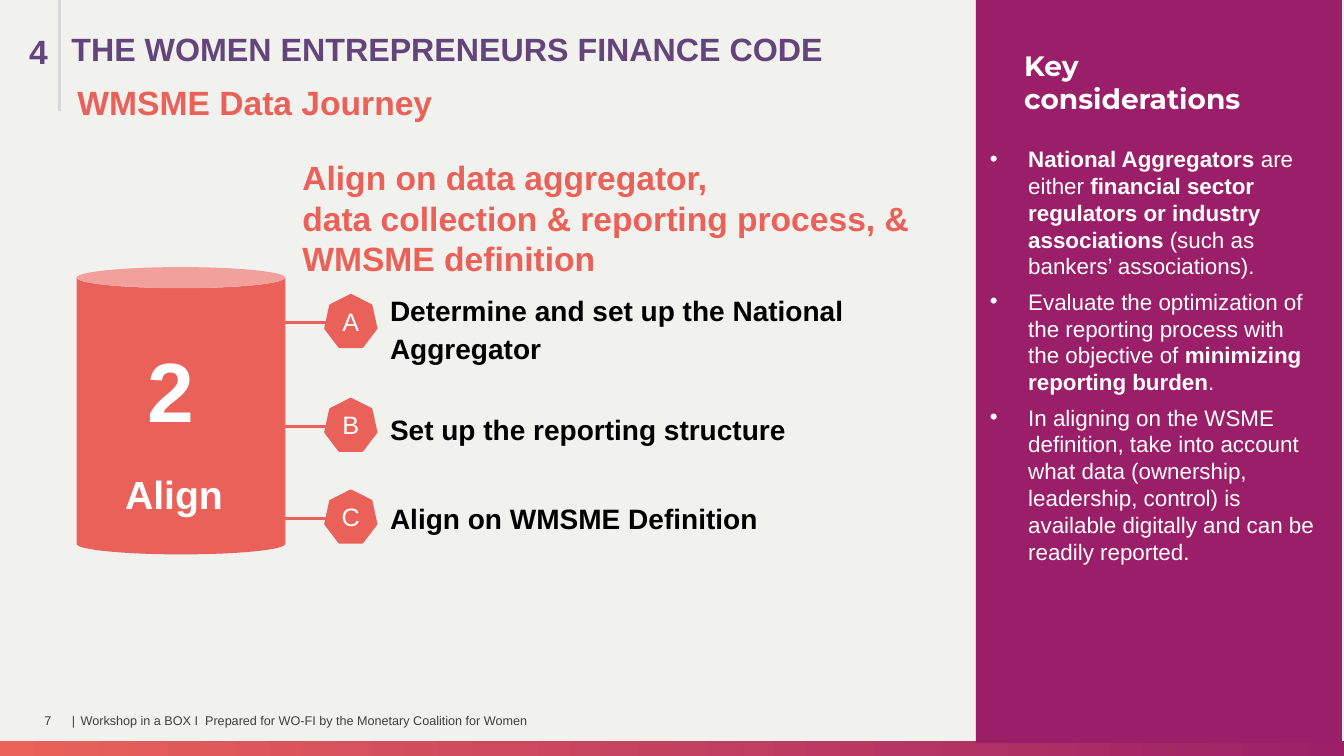
from lxml import etree
from pptx import Presentation
from pptx import util as u
from pptx.dml.color import RGBColor
from pptx.enum import shapes, text
from pptx.oxml import ns

CORAL = RGBColor(0xEA, 0x61, 0x59)
STRIP_CORAL = RGBColor(0xEB, 0x62, 0x58)
MAGENTA = RGBColor(0x9B, 0x1F, 0x68)
STRIP_MAGENTA = RGBColor(0x9B, 0x20, 0x68)
PURPLE = RGBColor(0x64, 0x45, 0x7B)
CREAM = RGBColor(0xF1, 0xF1, 0xEE)
DARK_GREY = RGBColor(0x3F, 0x3F, 0x3F)
LIGHT_GREY = RGBColor(0xD8, 0xD8, 0xD8)
BLACK = RGBColor(0, 0, 0)
WHITE = RGBColor(0xFF, 0xFF, 0xFF)

LEFT, CENTER = text.PP_ALIGN.LEFT, text.PP_ALIGN.CENTER
TOP, MIDDLE = text.MSO_ANCHOR.TOP, text.MSO_ANCHOR.MIDDLE

# Each paragraph is a list of (wording, bold) runs
CONSIDERATIONS = [
    [("National Aggregators ", True), ("are either ", False),
     ("financial sector regulators or industry associations ", True),
     ("(such as bankers’ associations).", False)],
    [("Evaluate the optimization of the reporting process with the objective of ", False),
     ("minimizing reporting burden", True), (".", False)],
    [("In aligning on the WSME definition, take into account what data (ownership, "
      "leadership, control) is available digitally and can be readily reported.", False)],
]
STEPS = ["Determine and set up the National Aggregator",
         "Set up the reporting structure",
         "Align on WMSME Definition"]


def inches(*lengths):
    return [u.Inches(length) for length in lengths]


def add_bullet(paragraph, indent):
    properties = paragraph._p.get_or_add_pPr()
    properties.set("marL", str(u.Inches(indent)))
    properties.set("indent", str(-u.Inches(indent)))
    colour = etree.SubElement(properties, ns.qn("a:buClr"))
    etree.SubElement(colour, ns.qn("a:srgbClr")).set("val", str(WHITE))
    etree.SubElement(properties, ns.qn("a:buFont")).set("typeface", "Arial")
    etree.SubElement(properties, ns.qn("a:buChar")).set("char", "•")


def write_text(shape, paragraphs, size, color, font="Arial", bold=False, align=LEFT,
               anchor=TOP, margins=(0.1, 0.05), line_spacing=None, space_before=(),
               bullet_indent=None):
    """Fill a shape with one string or a list of paragraphs; newlines break lines."""
    frame = shape.text_frame
    frame.word_wrap = True
    frame.vertical_anchor = anchor
    frame.margin_left = frame.margin_right = u.Inches(margins[0])
    frame.margin_top = frame.margin_bottom = u.Inches(margins[1])
    if isinstance(paragraphs, str):
        paragraphs = [paragraphs]
    for index, content in enumerate(paragraphs):
        paragraph = frame.add_paragraph() if index else frame.paragraphs[0]
        paragraph.alignment = align
        if line_spacing:
            paragraph.line_spacing = line_spacing
        if space_before:
            paragraph.space_before = u.Pt(space_before[index])
        if bullet_indent:
            add_bullet(paragraph, bullet_indent)
        runs = [(content, bold)] if isinstance(content, str) else content
        for wording, run_bold in runs:
            for number, line in enumerate(wording.split("\n")):
                if number:
                    paragraph.add_line_break()
                run = paragraph.add_run()
                run.text = line
                run.font.name = font
                run.font.size = u.Pt(size)
                run.font.bold = run_bold
                run.font.color.rgb = color


def add_text(slide, box, paragraphs, **style):
    write_text(slide.shapes.add_textbox(*inches(*box)), paragraphs, **style)


def add_filled(slide, kind, box, color, line_width=0):
    shape = slide.shapes.add_shape(kind, *inches(*box))
    shape.shadow.inherit = False
    shape.fill.solid()
    shape.fill.fore_color.rgb = color
    if line_width:
        shape.line.color.rgb = color
        shape.line.width = u.Pt(line_width)
    else:
        shape.line.fill.background()
    return shape


def add_line(slide, start, end, color):
    line = slide.shapes.add_connector(shapes.MSO_CONNECTOR.STRAIGHT, *inches(*start, *end))
    line.line.color.rgb = color
    line.line.width = u.Pt(2.25)
    etree.SubElement(line._element.spPr, ns.qn("a:effectLst"))


def add_footer(slide, left, top, width, height):
    # Gradient strip along the bottom edge
    strip_height = 0.15
    strip = add_filled(slide, shapes.MSO_SHAPE.RECTANGLE,
                       (left, top + height - strip_height, width, strip_height), CORAL)
    strip.fill.gradient()
    strip.fill.gradient_angle = 180
    for stop, color in zip(strip.fill.gradient_stops, (STRIP_MAGENTA, STRIP_CORAL)):
        stop.color.rgb = color
    # Page number, divider and credit
    style = dict(size=9, color=DARK_GREY, anchor=MIDDLE, margins=(0, 0))
    add_text(slide, (left + 0.44, top, 0.22, 0.4), "7", **style)
    add_text(slide, (left + 0.68, top, 0.1, 0.4), "|", align=CENTER, **style)
    add_text(slide, (left + 0.8, top, 5.71, 0.4),
             "Workshop in a BOX I  Prepared for WO-FI by the Monetary Coalition for Women",
             **style)


def add_key_panel(slide, left, top, width, height):
    add_filled(slide, shapes.MSO_SHAPE.RECTANGLE, (left, top, width, height), MAGENTA)
    add_text(slide, (left + 0.38, top + 0.43, 2.64, 0.77), "Key considerations",
             size=20, color=WHITE, font="Montserrat", bold=True)
    add_text(slide, (left + 0.04, top + 1.39, 3.44, 4.31), CONSIDERATIONS,
             size=16, color=WHITE, space_before=(0, 6, 6), bullet_indent=0.38)


def add_steps(slide, left, top, width, height):
    # Lettered heptagons, each tied back to the cylinder
    badge_width, badge_height = 0.5, 0.51
    for letter, offset in zip("ABC", (0, 1.03, 1.94)):
        badge_top = top + 0.12 + offset
        middle = badge_top + 0.27
        badge_left = left - 0.54
        add_line(slide, (badge_left - 1.39, middle), (badge_left + 0.02, middle), CORAL)
        badge = add_filled(slide, shapes.MSO_SHAPE.HEPTAGON,
                           (badge_left, badge_top, badge_width, badge_height), CORAL, 2)
        write_text(badge, letter, size=18, color=WHITE, align=CENTER, anchor=MIDDLE)
    add_text(slide, (left, top, width, height), STEPS, size=20, color=BLACK, bold=True,
             line_spacing=1.15, space_before=(0, 30, 36))


def add_cylinder(slide, left, top, width, height):
    can = add_filled(slide, shapes.MSO_SHAPE.CAN, (left, top, width, height), CORAL)
    can.adjustments[0] = 0.101
    style = dict(color=WHITE, bold=True, align=CENTER)
    add_text(slide, (left + 0.14, top + 0.66, 1.58, 1.11), "2", size=60, **style)
    add_text(slide, (left - 0.11, top + 1.97, 2.15, 0.55), "Align", size=28,
             anchor=MIDDLE, **style)


def add_header(slide, left, top, width, height):
    add_text(slide, (left + 0.19, top + 0.26, 0.71, 0.5), "4",
             size=24, color=PURPLE, bold=True)
    add_text(slide, (left + 0.61, top + 0.24, width - 0.61, 0.5),
             "THE WOMEN ENTREPRENEURS FINANCE CODE", size=23, color=PURPLE, bold=True)
    add_text(slide, (left + 0.67, top + 0.76, width - 0.67, 0.5), "WMSME Data Journey",
             size=24, color=CORAL, bold=True)
    add_line(slide, (left + 0.59, top), (left + 0.59, top + height), LIGHT_GREY)


def main():
    presentation = Presentation()
    presentation.slide_width, presentation.slide_height = inches(13.33, 7.5)
    slide = presentation.slides.add_slide(presentation.slide_layouts[6])
    slide.background.fill.solid()
    slide.background.fill.fore_color.rgb = CREAM

    add_footer(slide, 0, 6.95, 13.33, 0.55)
    add_key_panel(slide, 9.68, 0, 3.63, 7.37)
    add_steps(slide, 3.77, 2.81, 6.14, 2.52)
    add_cylinder(slide, 0.76, 2.65, 2.07, 2.85)
    add_text(slide, (2.9, 1.51, 6.82, 1.31),
             "Align on data aggregator, \n"
             "data collection & reporting process, & WMSME definition",
             size=24, color=CORAL, bold=True)
    add_header(slide, 0, 0, 9.68, 1.1)
    presentation.save("out.pptx")


if __name__ == "__main__":
    main()
